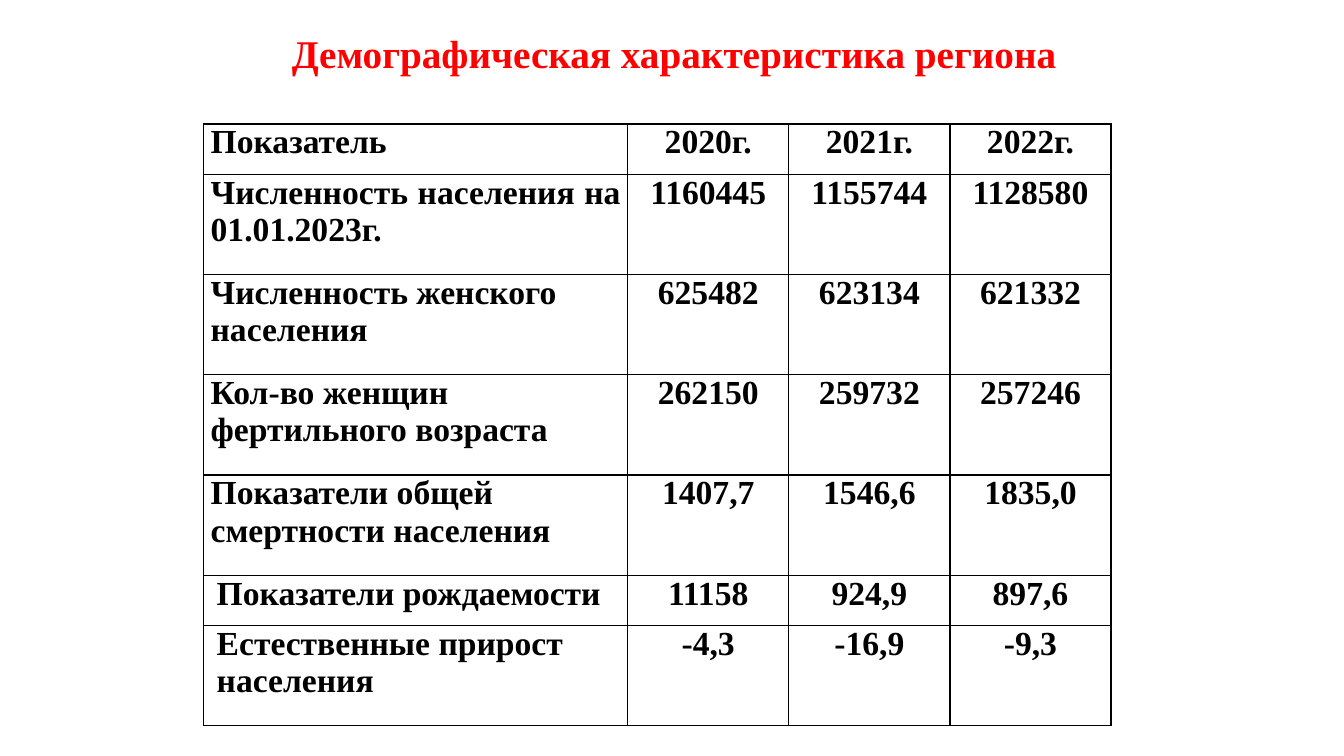
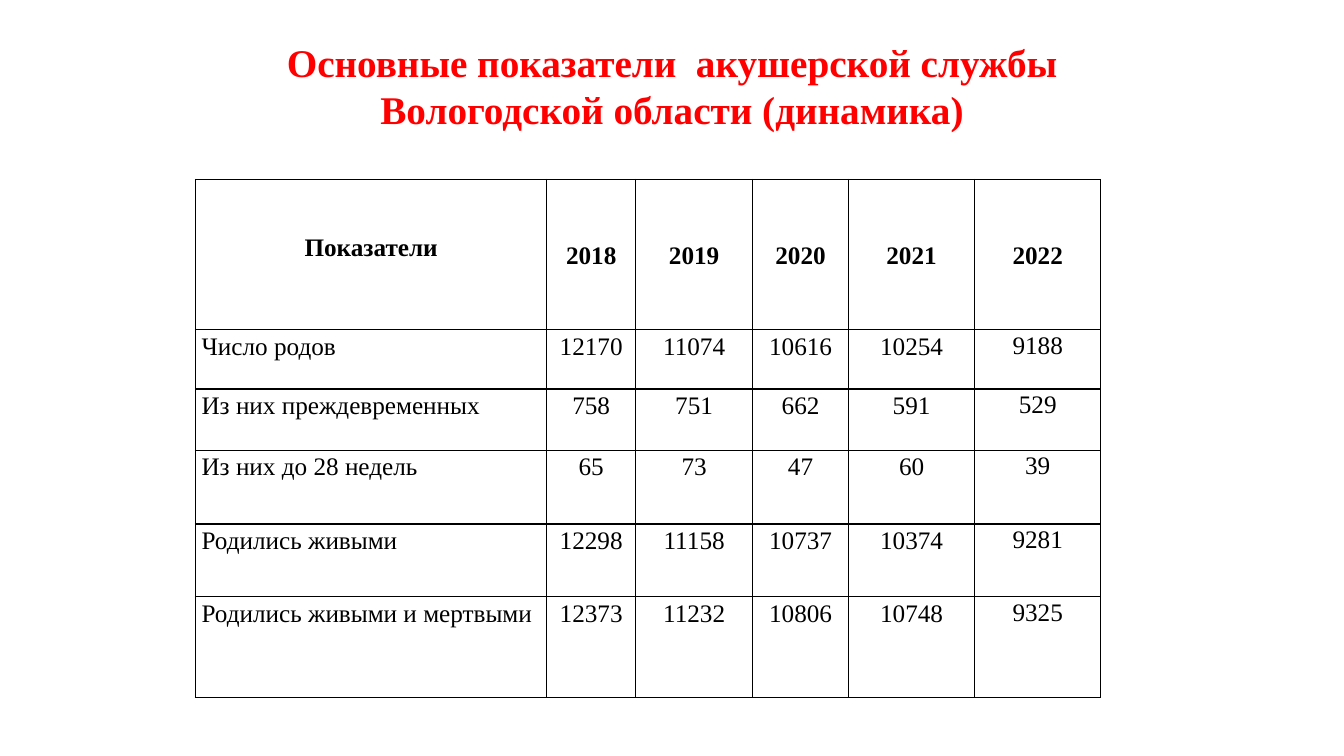
from dataclasses import dataclass

from lxml.etree import SubElement
from pptx import Presentation
from pptx.dml.color import RGBColor
from pptx.enum.text import MSO_ANCHOR, MSO_AUTO_SIZE, PP_ALIGN
from pptx.oxml.ns import qn
from pptx.util import Inches, Pt


@dataclass(frozen=True)
class Theme:
    font: str = "Times New Roman"
    title_color: RGBColor = RGBColor(0xFF, 0x00, 0x00)
    text_color: RGBColor = RGBColor(0x00, 0x00, 0x00)
    border_color: str = "000000"
    title_size: int = 28
    large_size: int = 24
    small_size: int = 18
    border_width: int = 1


THEME = Theme()
SLIDE_W, SLIDE_H = Inches(13.33), Inches(7.5)

REGION_ROWS = [
    ["Показатель", "2020г.", "2021г.", "2022г."],
    ["Численность населения на 01.01.2023г.", "1160445", "1155744", "1128580"],
    ["Численность женского населения", "625482", "623134", "621332"],
    ["Кол-во женщин фертильного возраста", "262150", "259732", "257246"],
    ["Показатели общей смертности населения", "1407,7", "1546,6", "1835,0"],
    ["Показатели рождаемости", "11158", "924,9", "897,6"],
    ["Естественные прирост населения", "-4,3", "-16,9", "-9,3"],
]
OBSTETRIC_ROWS = [
    ["Показатели", "2018", "2019", "2020", "2021", "2022"],
    ["Число родов", "12170", "11074", "10616", "10254", "9188"],
    ["Из них преждевременных", "758", "751", "662", "591", "529"],
    ["Из них до 28 недель", "65", "73", "47", "60", "39"],
    ["Родились живыми", "12298", "11158", "10737", "10374", "9281"],
    ["Родились живыми и мертвыми", "12373", "11232", "10806", "10748", "9325"],
]


def place(left, top, width, height):
    return (int(SLIDE_W * left / 100), int(SLIDE_H * top / 100),
            int(SLIDE_W * width / 100), int(SLIDE_H * height / 100))


def set_margins(target, side, top=0, bottom=0):
    target.margin_left = target.margin_right = Inches(side)
    target.margin_top, target.margin_bottom = Inches(top), Inches(bottom)


def style_runs(p, size, color, bold):
    for r in p.runs:
        r.font.name = THEME.font
        r.font.size = Pt(size)
        r.font.bold = bold
        r.font.color.rgb = color


def add_titled_slide(prs, title, box):
    s = prs.slides.add_slide(prs.slide_layouts[5])
    sp = s.shapes.title
    sp.left, sp.top, sp.width, sp.height = place(*box)
    tf = sp.text_frame
    tf.text = title
    tf.word_wrap = True
    tf.auto_size = MSO_AUTO_SIZE.NONE
    tf.vertical_anchor = MSO_ANCHOR.MIDDLE
    set_margins(tf, 0)
    p = tf.paragraphs[0]
    p.alignment = PP_ALIGN.CENTER
    style_runs(p, THEME.title_size, THEME.title_color, True)
    return s


def add_borders(cell):
    tcPr = cell._tc.get_or_add_tcPr()
    for i, side in enumerate(("lnL", "lnR", "lnT", "lnB")):
        ln = tcPr.makeelement(qn(f"a:{side}"), {"w": str(Pt(THEME.border_width))})
        fill = SubElement(ln, qn("a:solidFill"))
        SubElement(fill, qn("a:srgbClr"), val=THEME.border_color)
        tcPr.insert(i, ln)


def add_grid(s, rows, box, col_shares, row_shares):
    left, top, width, height = place(*box)
    table = s.shapes.add_table(len(rows), len(rows[0]), left, top, width, height).table
    table.first_row = table.horz_banding = False
    for col, share in zip(table.columns, col_shares):
        col.width = int(width * share / sum(col_shares))
    for row, share in zip(table.rows, row_shares):
        row.height = int(height * share / sum(row_shares))
    for i, values in enumerate(rows):
        for j, value in enumerate(values):
            cell = table.cell(i, j)
            cell.text = value
            cell.fill.background()
            add_borders(cell)
    return table


def style_cell(cell, size, bold, align, spacing=1.0):
    p = cell.text_frame.paragraphs[0]
    p.alignment = align
    p.line_spacing = spacing
    style_runs(p, size, THEME.text_color, bold)


def add_region_slide(prs):
    s = add_titled_slide(prs, "Демографическая характеристика региона",
                         (6, 1.6, 88.3, 10.67))
    table = add_grid(s, REGION_ROWS, (15.15, 16.4, 67.52, 79.6),
                     (4.21, 1.6, 1.6, 1.6), (1, 2, 2, 2, 2, 1, 2))
    for i, row in enumerate(table.rows):
        for j, cell in enumerate(row.cells):
            label_align = PP_ALIGN.JUSTIFY if i < 2 else PP_ALIGN.LEFT
            indent = 0.06 if j == 0 and i > 4 else 0
            set_margins(cell, 0.07)
            cell.margin_left = Inches(0.07 + indent)
            style_cell(cell, THEME.large_size, True,
                       PP_ALIGN.CENTER if j else label_align)


def add_obstetric_slide(prs):
    s = add_titled_slide(
        prs, "Основные показатели  акушерской службы\vВологодской области (динамика)",
        (6, 1.6, 88, 19.47))
    table = add_grid(s, OBSTETRIC_ROWS, (14.55, 23.73, 67.37, 68.53),
                     (3.48, 0.88, 1.16, 0.95, 1.25, 1.25),
                     (1.49, 0.59, 0.61, 0.73, 0.72, 1))
    last = len(table.columns) - 1
    for i, row in enumerate(table.rows):
        for j, cell in enumerate(row.cells):
            header, label = i == 0, j == 0
            if j == last:
                set_margins(cell, 0)
            else:
                set_margins(cell, 0.06, 0.01, 0.16 if header and label else 0)
            if header:
                cell.vertical_anchor = MSO_ANCHOR.MIDDLE
            style_cell(cell, THEME.small_size, header,
                       PP_ALIGN.LEFT if label and not header else PP_ALIGN.CENTER, 1.07)


def main():
    prs = Presentation()
    prs.slide_width, prs.slide_height = SLIDE_W, SLIDE_H
    add_region_slide(prs)
    add_obstetric_slide(prs)
    prs.save("out.pptx")


if __name__ == "__main__":
    main()
